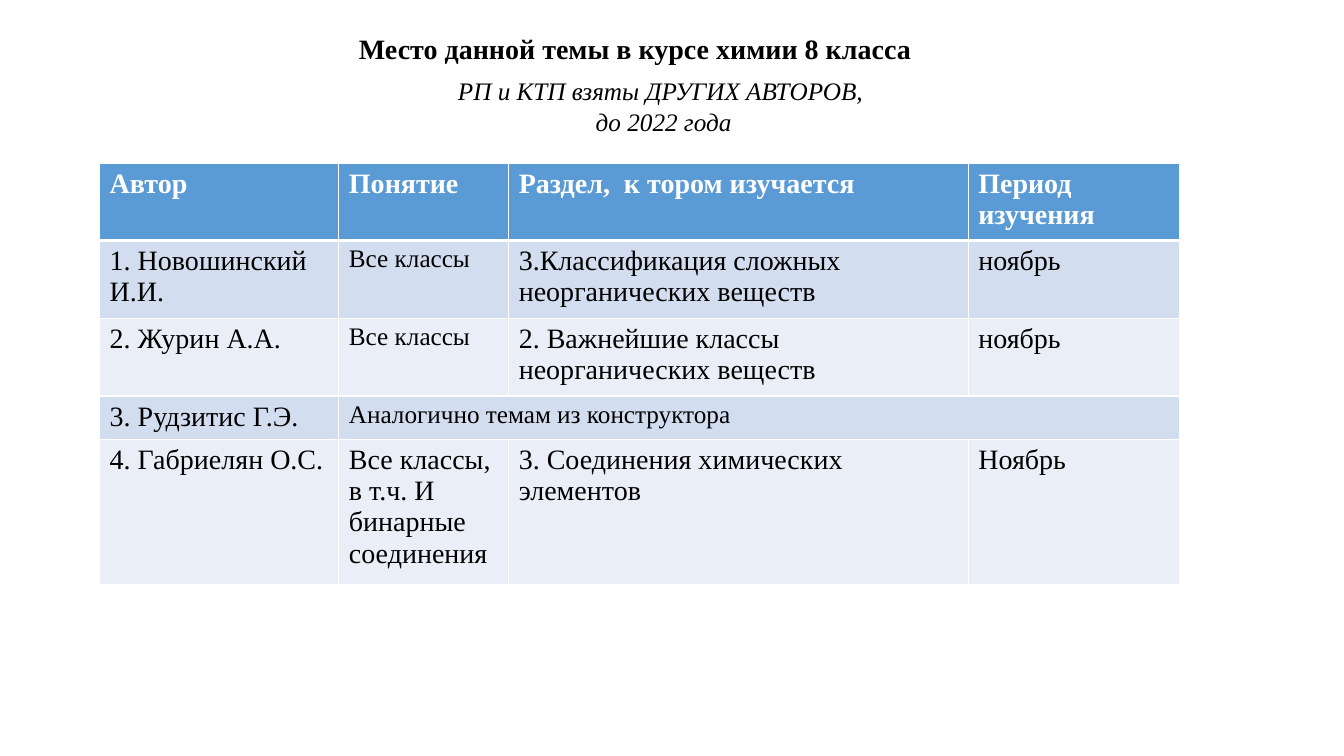
from dataclasses import dataclass

import pptx
import pptx.dml.color
import pptx.enum.text
import pptx.oxml
import pptx.oxml.ns
import pptx.util
from pptx.util import Cm

FONT = "Times New Roman"
BLACK, WHITE = "000000", "FFFFFF"
HEAD = "5B9BD5"
BANDS = ("D2DEEF", "EAEFF7")
COLS = (6.03, 4.28, 11.58, 5.33)


@dataclass
class Row:
    height: float
    texts: tuple[str, ...]
    size: int = 20  # size of the "Понятие" column


ROWS = (
    Row(1.93, ("Автор", "Понятие", "Раздел,  к тором изучается", "Период изучения")),
    Row(1.96, ("1. Новошинский И.И.", "Все классы",
               "3.Классификация сложных неорганических веществ", "ноябрь"), 18),
    Row(1.96, ("2. Журин А.А.", "Все классы",
               "2. Важнейшие классы неорганических веществ", "ноябрь"), 18),
    Row(1.1, ("3. Рудзитис Г.Э.", "Аналогично темам из конструктора"), 18),
    Row(3.63, ("4. Габриелян О.С.", "Все классы,  в т.ч. И бинарные соединения",
               "3. Соединения химических элементов", "Ноябрь")),
)


def color(code: str) -> pptx.dml.color.RGBColor:
    return pptx.dml.color.RGBColor.from_string(code)


def style(para, size: int, code: str = BLACK, bold: bool = False,
          italic: bool = False) -> None:
    font = para.font
    font.name, font.size = FONT, pptx.util.Pt(size)
    font.bold, font.italic = bold, italic
    font.color.rgb = color(code)


def border(cell, base: int) -> None:
    """Draw white cell edges; base is the bottom width in points."""
    props = cell._tc.get_or_add_tcPr()
    space = pptx.oxml.ns.nsdecls("a")
    edges = (("lnL", 1), ("lnR", 1), ("lnT", 1), ("lnB", base))
    for spot, (tag, width) in enumerate(edges):
        props.insert(spot, pptx.oxml.parse_xml(
            f'<a:{tag} {space} w="{pptx.util.Pt(width)}"><a:solidFill>'
            f'<a:srgbClr val="{WHITE}"/></a:solidFill></a:{tag}>'))


def add_title(slide) -> None:
    title = slide.shapes.title
    title.left, title.top = Cm(8.79), Cm(0.66)
    title.width, title.height = Cm(14.63), Cm(1.12)
    frame = title.text_frame
    frame.text = "Место данной темы в курсе химии 8 класса"
    frame.auto_size = pptx.enum.text.MSO_AUTO_SIZE.NONE
    frame.vertical_anchor = pptx.enum.text.MSO_ANCHOR.TOP
    para = frame.paragraphs[0]
    para.alignment = pptx.enum.text.PP_ALIGN.LEFT
    style(para, 20, bold=True)


def add_note(slide) -> None:
    box = slide.shapes.add_textbox(Cm(10.03), Cm(1.78), Cm(13.39), Cm(1.8))
    frame = box.text_frame
    frame.word_wrap = True
    frame.text = "РП и КТП взяты ДРУГИХ АВТОРОВ, \nдо 2022 года"
    for para in frame.paragraphs:
        para.alignment = pptx.enum.text.PP_ALIGN.CENTER
        style(para, 18, italic=True)


def add_grid(slide) -> None:
    high = sum(row.height for row in ROWS)
    table = slide.shapes.add_table(len(ROWS), len(COLS), Cm(2.51), Cm(4.11),
                                   Cm(sum(COLS)), Cm(high)).table
    for col, width in zip(table.columns, COLS):
        col.width = Cm(width)
    for r, row in enumerate(ROWS):
        table.rows[r].height = Cm(row.height)
        head = r == 0
        for c in range(len(COLS)):
            cell = table.cell(r, c)
            cell.fill.solid()
            cell.fill.fore_color.rgb = color(HEAD if head else BANDS[(r - 1) % 2])
            border(cell, 3 if head else 1)
        for c, text in enumerate(row.texts):
            cell = table.cell(r, c)
            cell.text = text
            style(cell.text_frame.paragraphs[0], row.size if c == 1 else 20,
                  WHITE if head else BLACK, bold=head)
        last = len(row.texts) - 1
        if last < len(COLS) - 1:
            table.cell(r, last).merge(table.cell(r, len(COLS) - 1))


def main() -> None:
    deck = pptx.Presentation()
    deck.slide_width, deck.slide_height = Cm(33.87), Cm(19.05)
    slide = deck.slides.add_slide(deck.slide_layouts.get_by_name("Title Only"))
    add_title(slide)
    add_note(slide)
    add_grid(slide)
    deck.save("out.pptx")


if __name__ == "__main__":
    main()
